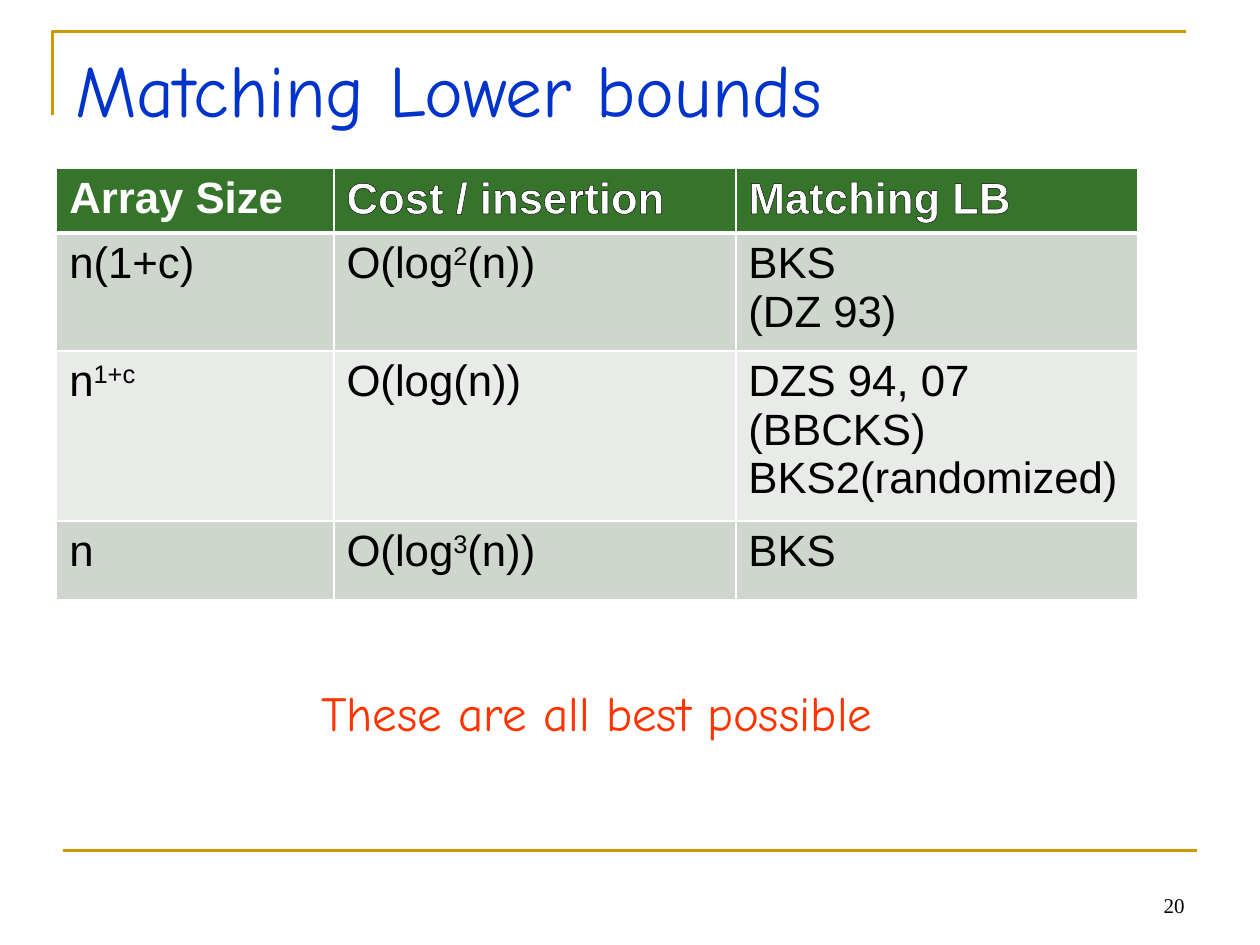
"""Build the slide that lists matching lower bounds for array insertion."""
from dataclasses import dataclass

from lxml.etree import SubElement
from pptx import Presentation
from pptx.dml.color import RGBColor
from pptx.enum.shapes import MSO_CONNECTOR
from pptx.enum.text import MSO_ANCHOR, PP_ALIGN
from pptx.oxml import parse_xml
from pptx.oxml.ns import nsdecls, qn
from pptx.util import Pt


@dataclass(frozen=True)
class Theme:
    rule: str = "CC9900"
    title: str = "0033CC"
    accent: str = "FF3300"
    ink: str = "000000"
    white: str = "FFFFFF"
    header: str = "35742A"
    bands: tuple = ("CED6CD", "E8EBE8")
    display_font: str = "Comic Neue"
    table_font: str = "Arial"
    number_font: str = "Times New Roman"
    title_size: float = 42
    caption_size: float = 28
    table_size: float = 25
    number_size: float = 12
    rule_width: float = 1.5


THEME = Theme()
COLUMN_WIDTHS = (158.4, 229.7, 229.7)
ROW_HEIGHTS = (35, 63, 91, 45)
HEADINGS = ("Array Size", "Cost / insertion", "Matching LB")
BOUNDS = (
    ("n(1+c)", "O(log^2^(n))", "BKS\n(DZ 93)"),
    ("n^1+c^", "O(log(n))", "DZS 94, 07\n(BBCKS)\nBKS2(randomized)"),
    ("n", "O(log^3^(n))", "BKS"),
)


def add_span(para, text, font, size, color, bold=False):
    span = para.add_run()
    span.text = text
    span.font.name = font
    span.font.size = Pt(size)
    span.font.bold = bold
    span.font.color.rgb = RGBColor.from_string(color)
    return span


def add_text(slide, bounds, text, font, size, color, align=PP_ALIGN.LEFT,
             anchor=MSO_ANCHOR.TOP, indent=0):
    box = slide.shapes.add_textbox(*map(Pt, bounds))
    box.text_frame.word_wrap = True
    box.text_frame.vertical_anchor = anchor
    para = box.text_frame.paragraphs[0]
    para.alignment = align
    if indent:
        para._p.get_or_add_pPr().set("marL", str(Pt(indent)))
    add_span(para, text, font, size, color)


def style_rule(shape):
    shape.line.color.rgb = RGBColor.from_string(THEME.rule)
    shape.line.width = Pt(THEME.rule_width)


def add_corner(slide, left, top, right, bottom):
    builder = slide.shapes.build_freeform(Pt(left), Pt(bottom))
    builder.add_line_segments([(Pt(left), Pt(top)), (Pt(right), Pt(top))], close=False)
    corner = builder.convert_to_shape()
    corner.shadow.inherit = False
    corner.fill.background()
    style_rule(corner)


def add_rule(slide, left, right, height):
    rule = slide.shapes.add_connector(
        MSO_CONNECTOR.STRAIGHT, Pt(left), Pt(height), Pt(right), Pt(height))
    style_rule(rule)
    SubElement(rule._element.spPr, qn("a:effectLst"))


def line_xml(tag, width, color):
    return parse_xml(
        f'<a:{tag} {nsdecls("a")} w="{Pt(width)}"><a:solidFill>'
        f'<a:srgbClr val="{color}"/></a:solidFill></a:{tag}>')


def style_cell(cell, fill, top, bottom):
    cell.fill.solid()
    cell.fill.fore_color.rgb = RGBColor.from_string(fill)
    borders = {"lnL": 1, "lnR": 1, "lnT": top, "lnB": bottom}
    for position, (tag, width) in enumerate(borders.items()):
        cell._tc.tcPr.insert(position, line_xml(tag, width, THEME.white))


def write_cell(cell, text, color, bold=False, outlined=False):
    """Write one paragraph per line, raising the parts between carets."""
    for number, line in enumerate(text.split("\n")):
        frame = cell.text_frame
        para = frame.add_paragraph() if number else frame.paragraphs[0]
        for index, part in enumerate(line.split("^")):
            if not part:
                continue
            span = add_span(para, part, THEME.table_font, THEME.table_size, color, bold)
            properties = span._r.get_or_add_rPr()
            if index % 2:
                properties.set("baseline", "30000")
            if outlined:
                properties.insert(0, line_xml("ln", 0.75, THEME.ink))


def add_bounds_table(slide, left, top):
    rows = (HEADINGS, *BOUNDS)
    table = slide.shapes.add_table(
        len(rows), len(HEADINGS), Pt(left), Pt(top),
        Pt(sum(COLUMN_WIDTHS)), Pt(sum(ROW_HEIGHTS))).table
    for column, width in zip(table.columns, COLUMN_WIDTHS):
        column.width = Pt(width)
    for number, (row, height, texts) in enumerate(zip(table.rows, ROW_HEIGHTS, rows)):
        row.height = Pt(height)
        for index, (cell, text) in enumerate(zip(row.cells, texts)):
            if number == 0:
                style_cell(cell, THEME.header, 1, 3)
                write_cell(cell, text, THEME.white, bold=True, outlined=index > 0)
            else:
                style_cell(cell, THEME.bands[(number - 1) % 2], 3 if number == 1 else 1, 1)
                write_cell(cell, text, THEME.ink)


def main():
    deck = Presentation()
    deck.slide_width, deck.slide_height = Pt(720), Pt(540)
    slide = deck.slides.add_slide(deck.slide_layouts[6])
    add_corner(slide, 30, 18, 678, 66)
    add_rule(slide, 36, 684, 486)
    add_text(slide, (36, 21.6, 648, 90), "Matching Lower bounds",
             THEME.display_font, THEME.title_size, THEME.title)
    add_text(slide, (516, 492, 168, 36), "20", THEME.number_font, THEME.number_size,
             THEME.ink, align=PP_ALIGN.RIGHT, anchor=MSO_ANCHOR.BOTTOM)
    add_bounds_table(slide, 32.4, 96)
    add_text(slide, (32.4, 318, 669, 109), "These are all best possible",
             THEME.display_font, THEME.caption_size, THEME.accent,
             anchor=MSO_ANCHOR.BOTTOM, indent=144)
    deck.save("out.pptx")


if __name__ == "__main__":
    main()
